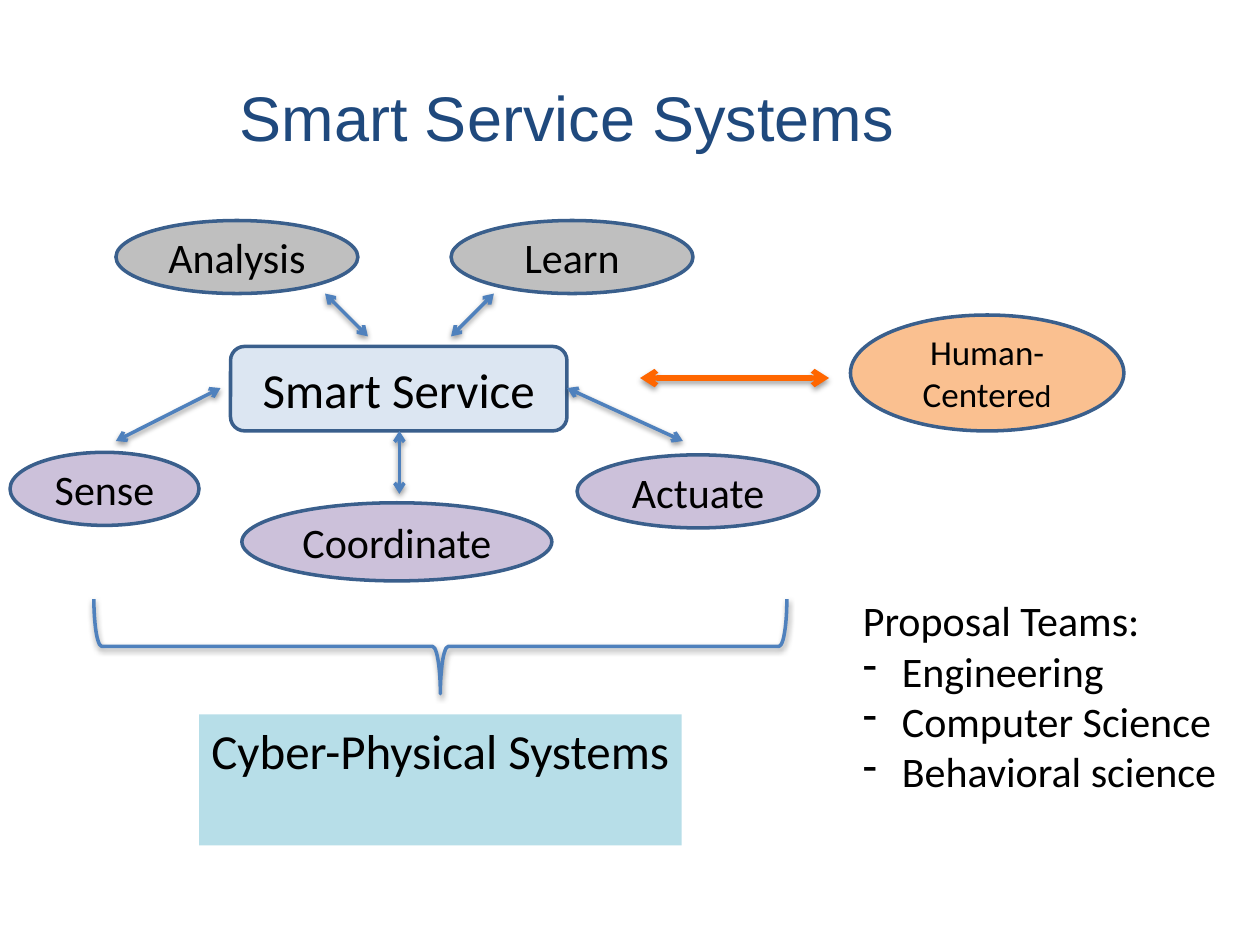
from dataclasses import dataclass

from lxml import etree
from pptx import Presentation
from pptx.dml.color import RGBColor
from pptx.enum.shapes import MSO_CONNECTOR, MSO_SHAPE
from pptx.enum.text import MSO_ANCHOR, MSO_AUTO_SIZE, PP_ALIGN
from pptx.oxml.ns import qn
from pptx.util import Pt

PX = 9144
ELLIPSE = MSO_SHAPE.OVAL
ROUNDED = MSO_SHAPE.ROUNDED_RECTANGLE
RECTANGLE = MSO_SHAPE.RECTANGLE
BRACE = MSO_SHAPE.RIGHT_BRACE
STRAIGHT = MSO_CONNECTOR.STRAIGHT
TOP, MIDDLE = MSO_ANCHOR.TOP, MSO_ANCHOR.MIDDLE
LEFT, CENTER = PP_ALIGN.LEFT, PP_ALIGN.CENTER
FIT_SHAPE = MSO_AUTO_SIZE.SHAPE_TO_FIT_TEXT

COLORS = {
    "title": "1F497D", "text": "000000", "outline": "3A5F8C",
    "service": "DCE6F2", "physical": "CCC1DA", "learning": "BFBFBF",
    "human": "FAC090", "systems": "B7DEE8",
    "link": "4F81BD", "human_link": "FF6600",
}


@dataclass
class Node:
    text: str
    left: int
    top: int
    width: int
    height: int
    fill: str
    size: int = 24
    kind: int = ELLIPSE
    outlined: bool = True


@dataclass
class Arrow:
    start: tuple[int, int]
    end: tuple[int, int]
    color: str = "link"
    weight: int = 2


SYSTEMS = Node("Cyber-Physical Systems", 158, 567, 383, 104, "systems", 28, RECTANGLE, False)
HUMAN = Node("Human-Centere", 675, 250, 217, 92, "human", 20)
NODES = [
    Node("Smart Service", 183, 275, 267, 67, "service", 28, ROUNDED),
    Node("Sense", 8, 359, 150, 58, "physical"),
    Node("Actuate", 458, 361, 192, 58, "physical"),
    Node("Coordinate", 192, 399, 246, 62, "physical"),
    Node("Analysis", 92, 175, 192, 58, "learning"),
    Node("Learn", 358, 175, 192, 58, "learning"),
]
ARROWS = [
    Arrow((450, 308), (542, 350)),
    Arrow((175, 308), (92, 350)),
    Arrow((358, 267), (392, 233)),
    Arrow((258, 233), (292, 267)),
    Arrow((317, 342), (317, 392)),
    Arrow((508, 300), (658, 300), "human_link", 3),
]
TEAMS = ["Engineering", "Computer Science", "Behavioral science"]


def color(name: str) -> RGBColor:
    return RGBColor.from_string(COLORS[name])


def box(*lengths: int) -> list[int]:
    return [length * PX for length in lengths]


def format_text(shape, size: int, align=CENTER, font: str = "Calibri", name: str = "text") -> None:
    for paragraph in shape.text_frame.paragraphs:
        paragraph.alignment = align
        for run in paragraph.runs:
            run.font.size = Pt(size)
            run.font.name = font
            run.font.color.rgb = color(name)


def add_shadow(shape) -> None:
    properties = shape._element.spPr
    for effects in properties.findall(qn("a:effectLst")):
        properties.remove(effects)
    effects = etree.SubElement(properties, qn("a:effectLst"))
    shadow = etree.SubElement(effects, qn("a:outerShdw"), blurRad="40000",
                              dist="20000", dir="5400000", rotWithShape="0")
    black = etree.SubElement(shadow, qn("a:srgbClr"), val="000000")
    etree.SubElement(black, qn("a:alpha"), val="38000")


def add_node(slide, node: Node):
    shape = slide.shapes.add_shape(node.kind, *box(node.left, node.top, node.width, node.height))
    shape.shadow.inherit = False
    shape.fill.solid()
    shape.fill.fore_color.rgb = color(node.fill)
    if node.outlined:
        shape.line.color.rgb = color("outline")
        shape.line.width = Pt(2)
    else:
        shape.line.fill.background()
    shape.text_frame.text = node.text
    shape.text_frame.word_wrap = True
    shape.text_frame.vertical_anchor = MIDDLE
    format_text(shape, node.size)
    return shape


def add_arrow(slide, arrow: Arrow) -> None:
    connector = slide.shapes.add_connector(STRAIGHT, *box(*arrow.start, *arrow.end))
    connector.line.color.rgb = color(arrow.color)
    connector.line.width = Pt(arrow.weight)
    line = connector._element.spPr.find(qn("a:ln"))
    for end in ("a:headEnd", "a:tailEnd"):
        etree.SubElement(line, qn(end), type="arrow")
    add_shadow(connector)


def add_title(slide) -> None:
    title = slide.shapes.add_textbox(*box(0, 30, 900, 125))
    title.text_frame.text = "Smart Service Systems"
    title.text_frame.word_wrap = True
    title.text_frame.vertical_anchor = MIDDLE
    format_text(title, 36, font="Arial", name="title")


def add_teams(slide) -> None:
    teams = slide.shapes.add_textbox(*box(675, 467, 303, 172))
    frame = teams.text_frame
    frame.word_wrap = False
    frame.auto_size = FIT_SHAPE
    frame.text = "Proposal Teams:"
    for team in TEAMS:
        paragraph = frame.add_paragraph()
        paragraph.text = team
        properties = paragraph._p.get_or_add_pPr()
        properties.set("marL", str(31 * PX))
        properties.set("indent", str(-31 * PX))
        etree.SubElement(properties, qn("a:buFontTx"))
        etree.SubElement(properties, qn("a:buChar"), char="-")
    format_text(teams, 24, LEFT)


def add_brace(slide) -> None:
    brace = slide.shapes.add_shape(BRACE, *box(312, 238, 75, 550))
    brace.rotation = 90
    brace.fill.background()
    brace.line.color.rgb = color("link")
    brace.line.width = Pt(2)
    add_shadow(brace)


def main() -> None:
    presentation = Presentation()
    presentation.slide_width, presentation.slide_height = box(1000, 750)
    slide = presentation.slides.add_slide(presentation.slide_layouts[6])
    add_title(slide)
    for node in NODES:
        add_node(slide, node)
    human = add_node(slide, HUMAN)
    last_letter = human.text_frame.paragraphs[0].add_run()
    last_letter.text = "d"
    format_text(human, HUMAN.size)
    last_letter.font.size = Pt(18)
    systems = add_node(slide, SYSTEMS)
    systems.text_frame.word_wrap = False
    systems.text_frame.vertical_anchor = TOP
    add_teams(slide)
    add_brace(slide)
    for arrow in ARROWS:
        add_arrow(slide, arrow)
    presentation.save("out.pptx")


if __name__ == "__main__":
    main()
